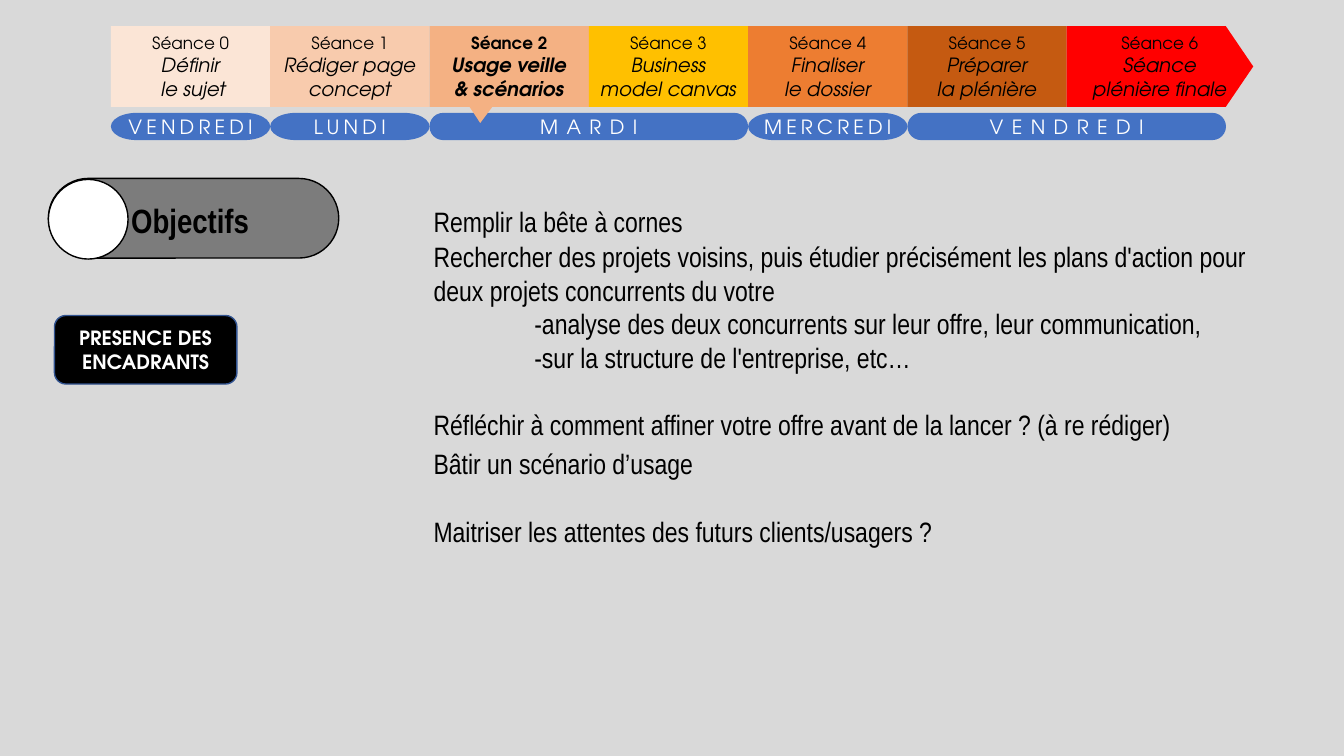
import dataclasses

import pptx
import pptx.dml.color
import pptx.enum.shapes
import pptx.enum.text
import pptx.oxml.ns
import pptx.util

Inches = pptx.util.Inches
Pt = pptx.util.Pt
SHAPES = pptx.enum.shapes.MSO_SHAPE
ANCHOR = pptx.enum.text.MSO_ANCHOR
ALIGN = pptx.enum.text.PP_ALIGN


@dataclasses.dataclass(frozen=True)
class Theme:
    """Colours, fonts and type sizes of the slide."""
    background: str = "D9D9D9"
    ink: str = "000000"
    paper: str = "FFFFFF"
    day: str = "4472C4"
    banner: str = "7C7C7C"
    badge_edge: str = "325491"
    current: str = "F4B183"
    display_font: str = "TeX Gyre Adventor"
    body_font: str = "Arial Narrow"
    session_size: int = 12
    label_size: int = 14
    body_size: int = 20
    title_size: int = 24


THEME = Theme()
LEFT, TOP, STEP, HEIGHT = 1.1, 0.26, 1.58, 0.8
CURRENT_SESSION = 2

SESSIONS = [
    (["Définir", " le sujet"], "FBE5D6"),
    (["Rédiger page concept"], "F8CBAD"),
    (["Usage veille", "& scénarios"], THEME.current),
    (["Business model canvas"], "FFC000"),
    (["Finaliser", "le dossier"], "ED7D31"),
    (["Préparer", "la plénière"], "C55A11"),
    (["Séance", "plénière finale"], "FF0000"),
]

DAYS = [("VENDREDI", 0, 1), ("LUNDI", 1, 1), ("MARDI", 2, 2),
        ("MERCREDI", 4, 1), ("VENDREDI", 5, 2)]

OBJECTIVES = [
    ("Remplir la bête à cornes", 0, 0),
    ("Rechercher des projets voisins, puis étudier précisément les plans "
     "d'action pour deux projets concurrents du votre", 0, 1),
    ("-analyse des deux concurrents sur leur offre, leur communication,", 1, 0),
    ("-sur la structure de l'entreprise, etc…", 1, 0),
    ("Réfléchir à comment affiner votre offre avant de la lancer ? (à re rédiger)", 0, 24),
    ("Bâtir un scénario d’usage", 0, 4),
    ("Maitriser les attentes des futurs clients/usagers ?", 0, 24),
]


def rgb(value):
    """Turn a hex string into a colour."""
    return pptx.dml.color.RGBColor.from_string(value)


def add_block(slide, kind, box, fill, edge=None, adjust=None):
    """Add a flat preset shape with an optional thin outline."""
    block = slide.shapes.add_shape(kind, *map(Inches, box))
    block.shadow.inherit = False
    block.fill.solid()
    block.fill.fore_color.rgb = rgb(fill)
    if edge:
        block.line.color.rgb = rgb(edge)
        block.line.width = Pt(1)
    else:
        block.line.fill.background()
    if adjust is not None:
        block.adjustments[0] = adjust
    return block


def add_run(paragraph, text, font, size, color, bold=False, italic=False, tracking=0):
    """Add one formatted run, with optional letter spacing in points."""
    run = paragraph.add_run()
    run.text = text
    run.font.name = font
    run.font.size = Pt(size)
    run.font.color.rgb = rgb(color)
    run.font.bold = bold
    run.font.italic = italic
    if tracking:
        run.font._element.set("spc", str(tracking * 100))


def write_centred(block, lines):
    """Write lines of (text, size, colour, style) centred in a block."""
    frame = block.text_frame
    frame.word_wrap = True
    frame.vertical_anchor = ANCHOR.MIDDLE
    for index, (text, size, color, style) in enumerate(lines):
        paragraph = frame.add_paragraph() if index else frame.paragraphs[0]
        paragraph.alignment = ALIGN.CENTER
        add_run(paragraph, text, THEME.display_font, size, color, **style)


def add_session(slide, number, topics, fill):
    """Add one session step; the last one is an arrow."""
    left = LEFT + number * STEP
    if number == len(SESSIONS) - 1:
        step = add_block(slide, SHAPES.PENTAGON, (left, TOP, 1.85, HEIGHT), fill, adjust=0.34)
        step.text_frame.margin_left = Inches(0.23)
    else:
        step = add_block(slide, SHAPES.RECTANGLE, (left, TOP, STEP, HEIGHT), fill)
    bold = number == CURRENT_SESSION
    heading = (f"Séance {number}", THEME.session_size, THEME.ink, {"bold": bold})
    style = {"bold": bold, "italic": True}
    write_centred(step, [heading] + [(topic, THEME.label_size, THEME.ink, style)
                                     for topic in topics])


def add_day(slide, name, first, span):
    """Add a day capsule covering one or more sessions."""
    box = (LEFT + first * STEP, 1.12, span * STEP, 0.27)
    if span == 1:
        capsule = add_block(slide, SHAPES.FLOWCHART_TERMINATOR, box, THEME.day)
    else:
        capsule = add_block(slide, SHAPES.ROUNDED_RECTANGLE, box, THEME.day, adjust=0.5)
    write_centred(capsule, [(name, THEME.label_size, THEME.paper, {"tracking": 3 * span})])
    frame = capsule.text_frame
    frame.word_wrap = False
    frame.margin_left = frame.margin_right = frame.margin_top = frame.margin_bottom = 0


def place_text(placeholder, box):
    """Move a placeholder to the front and give it a plain frame."""
    tree = placeholder.element.getparent()
    tree.append(placeholder.element)
    placeholder.left, placeholder.top, placeholder.width, placeholder.height = map(Inches, box)
    frame = placeholder.text_frame
    frame.margin_left = frame.margin_right = frame.margin_top = frame.margin_bottom = 0
    frame.vertical_anchor = ANCHOR.TOP
    frame.auto_size = pptx.enum.text.MSO_AUTO_SIZE.NONE
    frame.word_wrap = True
    return frame


def add_title(slide):
    """Write the heading over its banner."""
    add_block(slide, SHAPES.ROUNDED_RECTANGLE, (0.48, 1.77, 2.88, 0.79),
              THEME.banner, THEME.ink, 0.5)
    add_block(slide, SHAPES.OVAL, (0.48, 1.78, 0.79, 0.79), THEME.paper, THEME.ink)
    heading = place_text(slide.shapes.title, (1.3, 1.98, 1.9, 0.42)).paragraphs[0]
    heading.alignment = ALIGN.LEFT
    add_run(heading, "Objectifs", THEME.body_font, THEME.title_size, THEME.ink, bold=True)


def add_objectives(slide):
    """Write the objectives in the body placeholder."""
    frame = place_text(slide.placeholders[1], (4.3, 2.03, 8.4, 4.1))
    for index, (text, indent, gap) in enumerate(OBJECTIVES):
        paragraph = frame.add_paragraph() if index else frame.paragraphs[0]
        paragraph.line_spacing = 1.0
        paragraph.space_before = Pt(gap)
        paragraph.space_after = Pt(0)
        paragraph.alignment = ALIGN.LEFT
        properties = paragraph._p.get_or_add_pPr()
        properties.set("marL", str(Inches(indent)))
        properties.set("indent", "0")
        properties.append(pptx.oxml.parse_xml(
            f"<a:buNone {pptx.oxml.ns.nsdecls('a')}/>"))
        add_run(paragraph, text, THEME.body_font, THEME.body_size, THEME.ink)


def main():
    """Build the session slide and save it."""
    deck = pptx.Presentation()
    deck.slide_width, deck.slide_height = Inches(13.33), Inches(7.5)
    slide = deck.slides.add_slide(deck.slide_layouts[1])
    slide.background.fill.solid()
    slide.background.fill.fore_color.rgb = rgb(THEME.background)
    for number, (topics, fill) in enumerate(SESSIONS):
        add_session(slide, number, topics, fill)
    for name, first, span in DAYS:
        add_day(slide, name, first, span)
    pointer = add_block(slide, SHAPES.ISOSCELES_TRIANGLE, (4.65, 1.05, 0.24, 0.17),
                        THEME.current, adjust=0.53)
    pointer.rotation = 180
    add_title(slide)
    add_objectives(slide)
    badge = add_block(slide, SHAPES.ROUNDED_RECTANGLE, (0.54, 3.13, 1.81, 0.68),
                      THEME.ink, THEME.badge_edge)
    write_centred(badge, [(line, THEME.label_size, THEME.paper, {"bold": True})
                          for line in ("PRESENCE DES", "ENCADRANTS")])
    deck.save("out.pptx")


if __name__ == "__main__":
    main()
